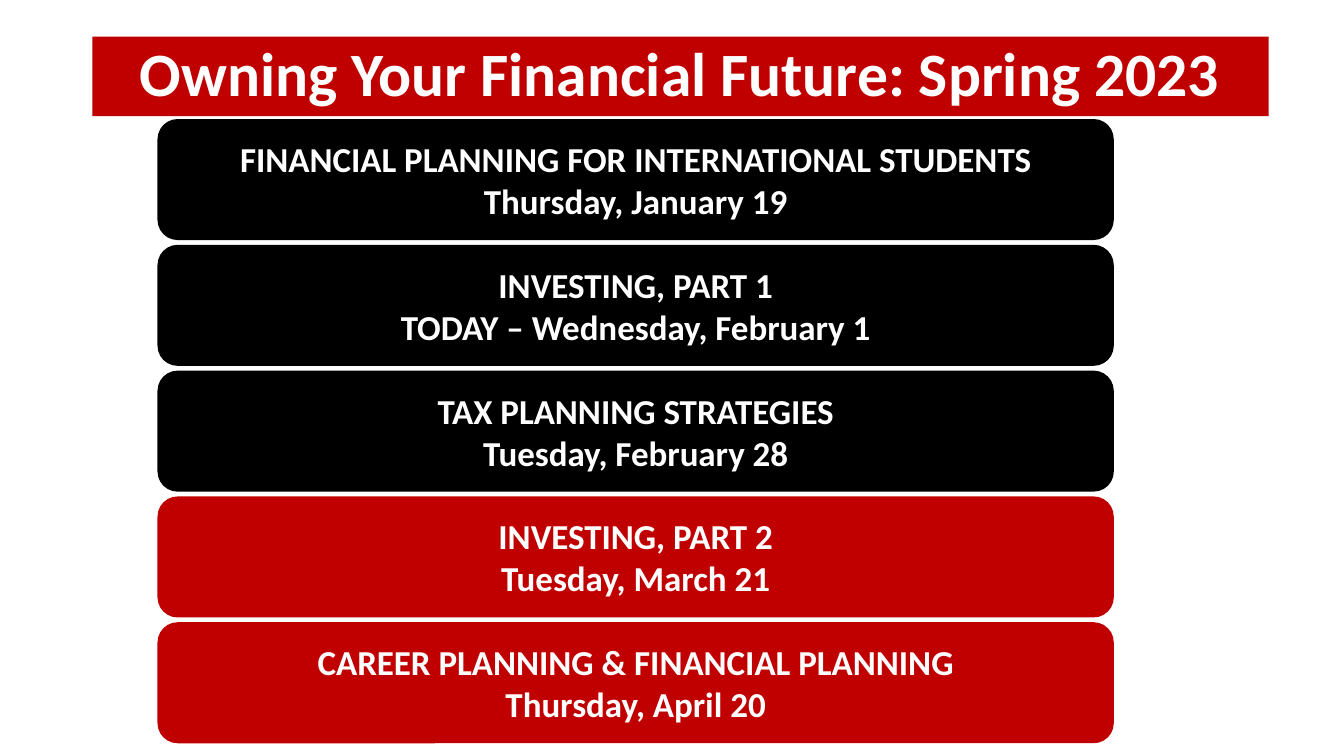
from pptx import Presentation
from pptx.dml.color import RGBColor
from pptx.enum.shapes import MSO_SHAPE
from pptx.enum.text import MSO_ANCHOR, MSO_AUTO_SIZE, PP_ALIGN
from pptx.util import Cm, Pt

RED, BLACK, WHITE = "C00000", "000000", "FFFFFF"

SESSIONS = [
    ("FINANCIAL PLANNING FOR INTERNATIONAL STUDENTS", "Thursday, January 19", BLACK),
    ("INVESTING, PART 1", "TODAY – Wednesday, February 1", BLACK),
    ("TAX PLANNING STRATEGIES", "Tuesday, February 28", BLACK),
    ("INVESTING, PART 2", "Tuesday, March 21", RED),
    ("CAREER PLANNING & FINANCIAL PLANNING", "Thursday, April 20", RED),
]
FIRST_TOP, PITCH = 3.0, 3.17


def color(hex_string):
    return RGBColor.from_string(hex_string)


class ScheduleSlide:
    font = "Calibri"

    def __init__(self, prs):
        self.slide = prs.slides.add_slide(prs.slide_layouts[5])

    def fill(self, shape, hex_string):
        shape.fill.solid()
        shape.fill.fore_color.rgb = color(hex_string)

    def set_lines(self, shape, lines, size, spacing=1.0):
        """Set centred bold white lines, one paragraph each."""
        frame = shape.text_frame
        frame.word_wrap = True
        frame.auto_size = MSO_AUTO_SIZE.NONE
        frame.vertical_anchor = MSO_ANCHOR.MIDDLE
        for index, line in enumerate(lines):
            paragraph = frame.add_paragraph() if index else frame.paragraphs[0]
            paragraph.alignment = PP_ALIGN.CENTER
            paragraph.line_spacing = spacing
            paragraph.space_before = Pt(0)
            run = paragraph.add_run()
            run.text = line
            run.font.name = self.font
            run.font.size = Pt(size)
            run.font.bold = True
            run.font.color.rgb = color(WHITE)

    def title(self, text):
        banner = self.slide.shapes.title
        banner.left, banner.top = Cm(2.33), Cm(0.92)
        banner.width, banner.height = Cm(29.64), Cm(2.01)
        self.fill(banner, RED)
        self.set_lines(banner, [text], 44, 0.9)

    def session(self, top, topic, date, background):
        card = self.slide.shapes.add_shape(
            MSO_SHAPE.ROUNDED_RECTANGLE, Cm(3.97), Cm(top), Cm(24.1), Cm(3.05))
        card.shadow.inherit = False
        card.line.fill.background()
        self.fill(card, background)
        self.set_lines(card, [topic, date], 25)


def main():
    prs = Presentation()
    prs.slide_width, prs.slide_height = Cm(33.87), Cm(19.05)
    schedule = ScheduleSlide(prs)
    schedule.title("Owning Your Financial Future: Spring 2023")
    for row, (topic, date, background) in enumerate(SESSIONS):
        schedule.session(FIRST_TOP + row * PITCH, topic, date, background)
    prs.save("out.pptx")


if __name__ == "__main__":
    main()
